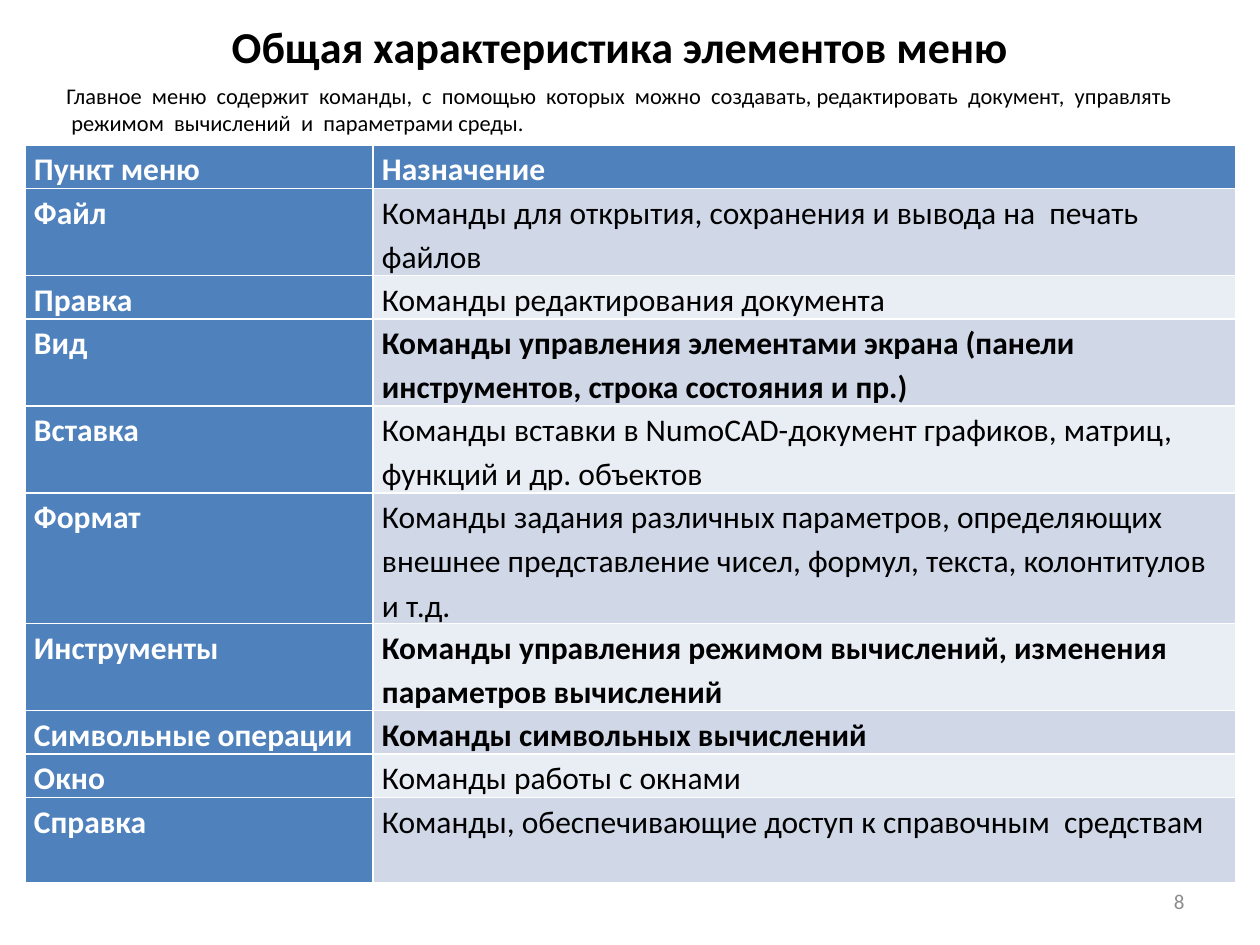
import pptx
import pptx.util
import pptx.dml.color
import pptx.enum.text
from dataclasses import dataclass

PX = 914400 / 126
ALIGN = pptx.enum.text.PP_ALIGN
MID = pptx.enum.text.MSO_ANCHOR.MIDDLE


@dataclass
class Theme:
    font: str = "Calibri"
    ink: str = "000000"
    white: str = "FFFFFF"
    gray: str = "8C8C8C"
    blue: str = "4F81BD"
    bands: tuple = ("E9EDF4", "D0D8E8")
    title: float = 25.2
    intro: float = 12.8
    cell: float = 18
    page: float = 12


theme = Theme()


def px(n):
    return pptx.util.Emu(round(n * PX))


def write(frame, text, size, color, bold=False, align=ALIGN.LEFT):
    frame.word_wrap = True
    para = frame.paragraphs[0]
    para.text = text
    para.alignment = align
    para.font.name = theme.font
    para.font.size = pptx.util.Pt(size)
    para.font.bold = bold
    para.font.color.rgb = pptx.dml.color.RGBColor.from_string(color)
    return para


deck = pptx.Presentation()
deck.slide_width, deck.slide_height = px(1260), px(945)
slide = deck.slides.add_slide(deck.slide_layouts[5])

title = slide.shapes.title
title.left, title.top, title.width, title.height = px(64), px(16), px(1134), px(59)
title.text_frame.margin_right = px(35)
title.text_frame.vertical_anchor = MID
write(title.text_frame, "Общая характеристика элементов меню",
      theme.title, theme.ink, True, ALIGN.CENTER)

intro = slide.shapes.add_textbox(px(54), px(76), px(1134), px(59))
para = write(
    intro.text_frame,
    "Главное  меню  содержит  команды,  с  помощью  которых  можно  создавать, "
    "редактировать  документ,  управлять  режимом  вычислений  и  параметрами среды.",
    theme.intro, theme.ink)
para.space_before = pptx.util.Pt(2.56)

rows = [
    ("Пункт меню", "Назначение", 42, True),
    ("Файл", "Команды для открытия, сохранения и вывода на  печать файлов", 86, False),
    ("Правка", "Команды редактирования документа", 42, False),
    ("Вид", "Команды управления элементами экрана (панели инструментов, "
     "строка состояния и пр.)", 86, True),
    ("Вставка", "Команды вставки в NumoCAD-документ графиков, матриц, "
     "функций и др. объектов", 86, False),
    ("Формат", "Команды задания различных параметров, определяющих внешнее "
     "представление чисел, формул, текста, колонтитулов и т.д.", 130, False),
    ("Инструменты", "Команды управления режимом вычислений, изменения "
     "параметров вычислений", 86, True),
    ("Символьные операции", "Команды символьных вычислений", 42, True),
    ("Окно", "Команды работы с окнами", 42, False),
    ("Справка", "Команды, обеспечивающие доступ к справочным  средствам", 86, False),
]
high = sum(row[2] for row in rows)
table = slide.shapes.add_table(len(rows), 2, px(25), px(145), px(1211), px(high)).table
table.first_col = True
for col, wide in zip(table.columns, (348, 863)):
    col.width = px(wide)

for r, (name, use, tall, bold) in enumerate(rows):
    table.rows[r].height = px(tall)
    for c, text in enumerate((name, use)):
        cell = table.cell(r, c)
        head = r == 0 or c == 0
        cell.margin_left = cell.margin_right = px(9)
        cell.margin_top = cell.margin_bottom = 0
        cell.fill.solid()
        cell.fill.fore_color.rgb = pptx.dml.color.RGBColor.from_string(
            theme.blue if head else theme.bands[r % 2])
        para = write(cell.text_frame, text, theme.cell,
                     theme.white if head else theme.ink, head or bold)
        para.line_spacing = 1.15

page = slide.shapes.add_textbox(px(903), px(876), px(294), px(50))
page.text_frame.vertical_anchor = MID
write(page.text_frame, "8", theme.page, theme.gray, align=ALIGN.RIGHT)

deck.save("out.pptx")
